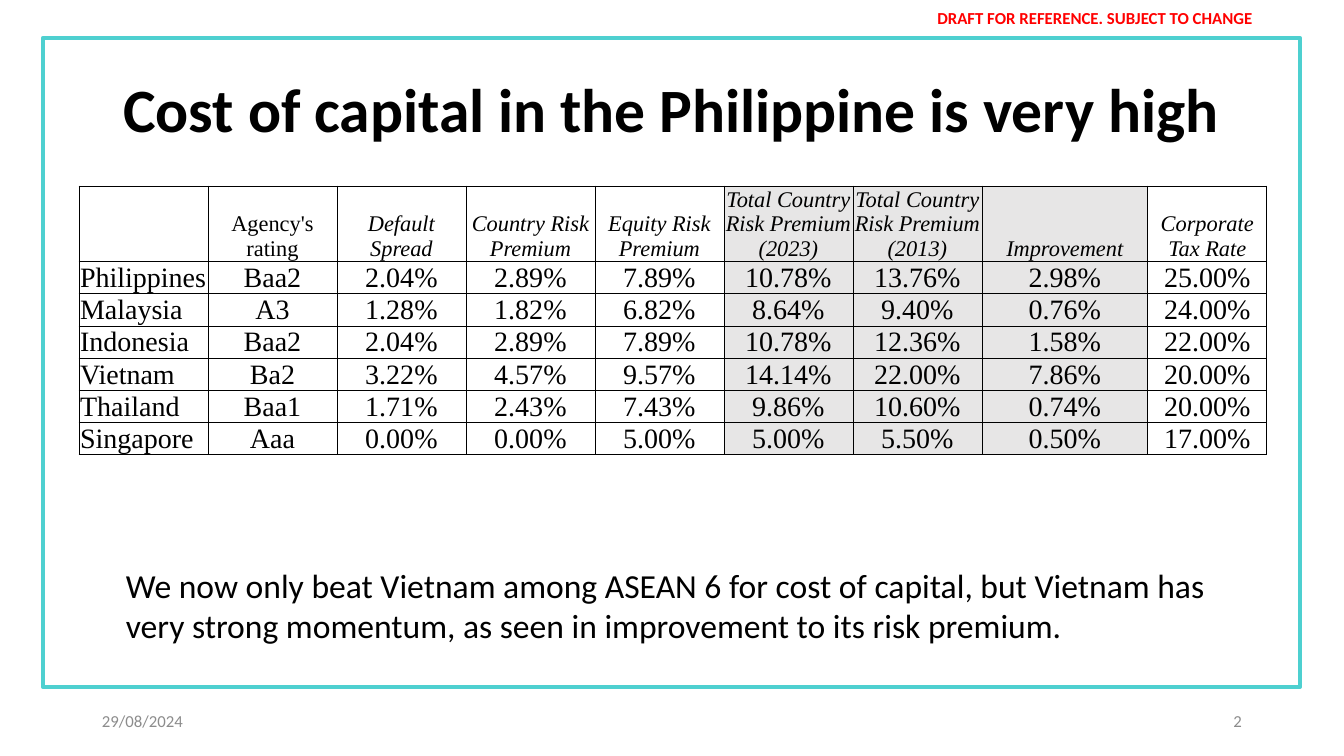
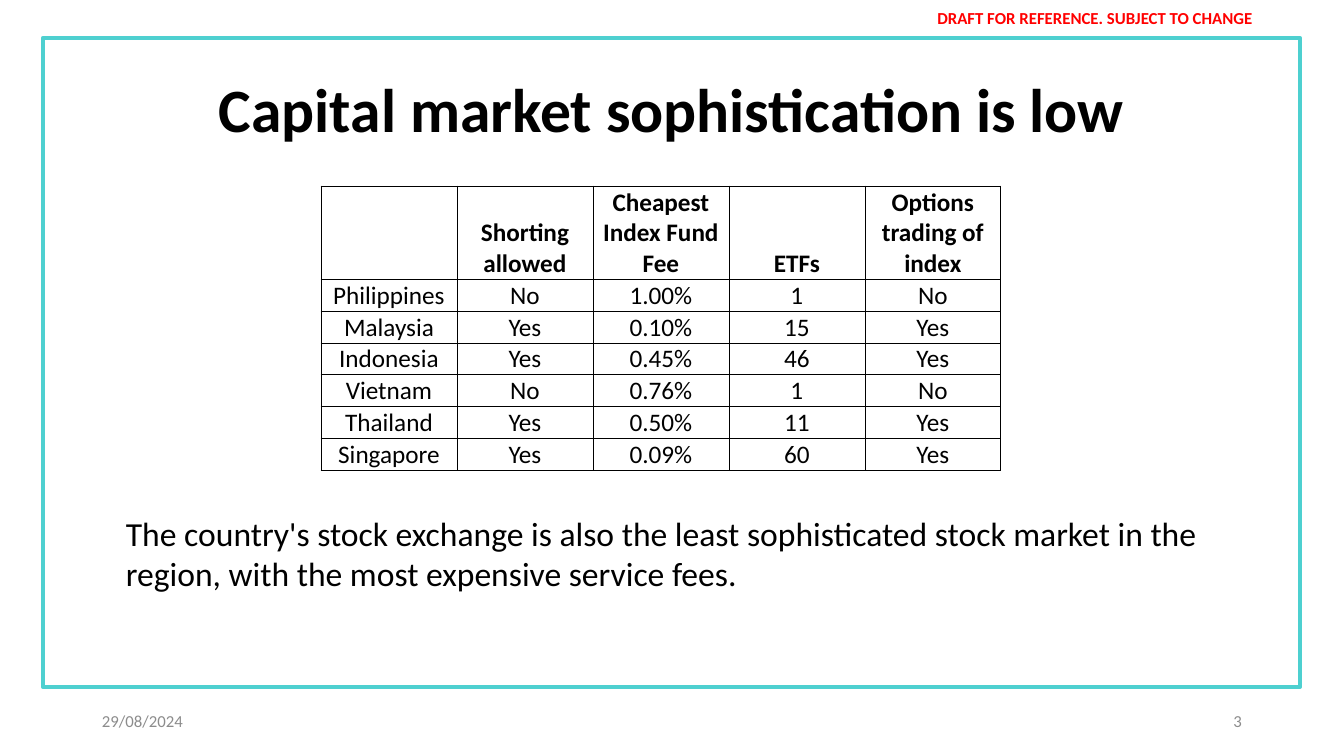
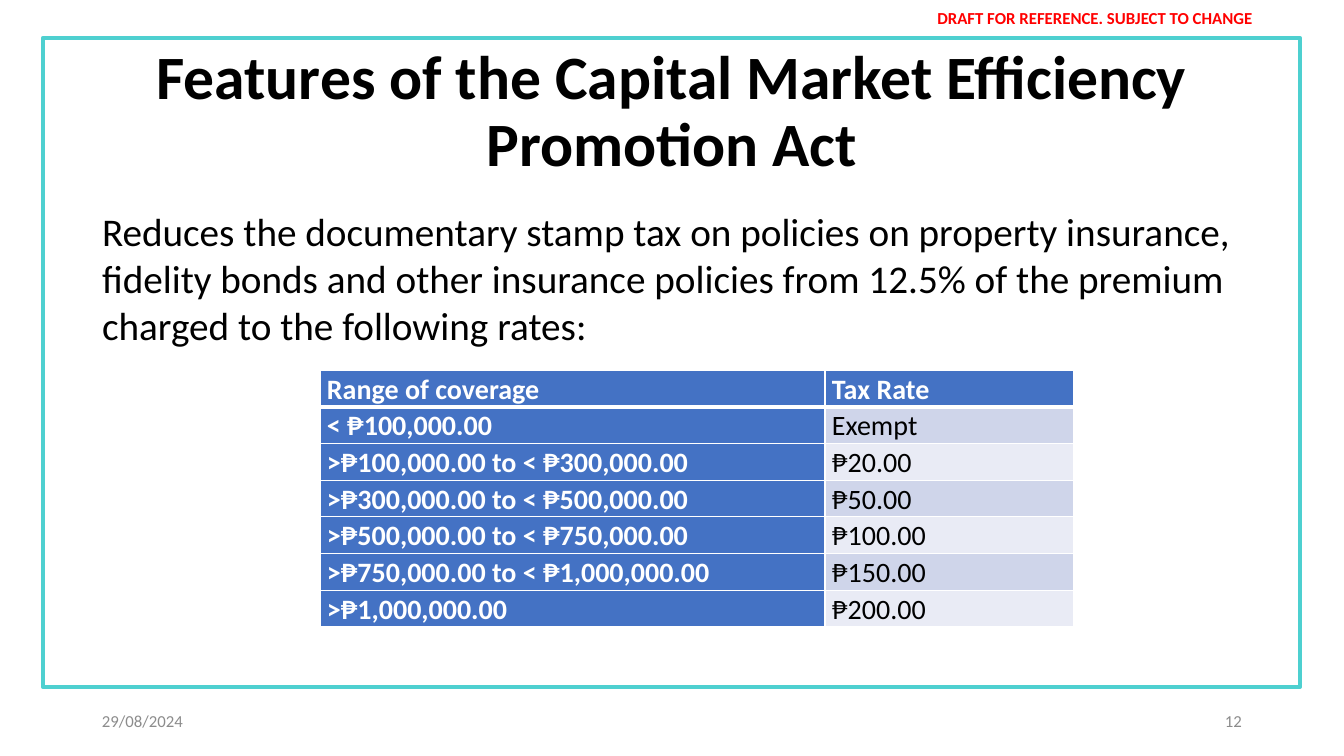
from typing import NamedTuple

from lxml.etree import SubElement
from pptx import Presentation
from pptx.dml.color import RGBColor
from pptx.enum.shapes import MSO_SHAPE as Preset
from pptx.enum.text import MSO_ANCHOR as Anchor, MSO_AUTO_SIZE as AutoSize, PP_ALIGN as Align
from pptx.oxml.ns import qn
from pptx.util import Emu, Pt

SCALE = 12192000 / 1344
COLORS = {
    "black": "000000", "white": "FFFFFF", "red": "FF0000", "gray": "8C8C8C",
    "frame": "4ED0D0", "shade": "E7E6E6", "blue": "4472C4",
    "band_dark": "CFD5EA", "band_light": "E9EBF5",
}
SERIF = "Times New Roman"
DATE = "29/08/2024"
TITLE_ONLY, TITLE_AND_BODY = 5, 1


class Box(NamedTuple):
    left: int
    top: int
    width: int
    height: int

    def inner(self, left, top, width, height):
        return Box(self.left + left, self.top + top, width, height)


PAGE = Box(0, 0, 1344, 756)
CONTENT = PAGE.inner(43, 38, 1257, 649)

CAPITAL_COSTS = [
    ["", "Agency's rating", "Default Spread", "Country Risk Premium", "Equity Risk Premium",
     "Total Country Risk Premium\n(2023)", "Total Country Risk Premium\n(2013)",
     "Improvement", "Corporate Tax Rate"],
    ["Philippines", "Baa2", "2.04%", "2.89%", "7.89%", "10.78%", "13.76%", "2.98%", "25.00%"],
    ["Malaysia", "A3", "1.28%", "1.82%", "6.82%", "8.64%", "9.40%", "0.76%", "24.00%"],
    ["Indonesia", "Baa2", "2.04%", "2.89%", "7.89%", "10.78%", "12.36%", "1.58%", "22.00%"],
    ["Vietnam", "Ba2", "3.22%", "4.57%", "9.57%", "14.14%", "22.00%", "7.86%", "20.00%"],
    ["Thailand", "Baa1", "1.71%", "2.43%", "7.43%", "9.86%", "10.60%", "0.74%", "20.00%"],
    ["Singapore", "Aaa", "0.00%", "0.00%", "5.00%", "5.00%", "5.50%", "0.50%", "17.00%"],
]
MARKET_FEATURES = [
    ["", "Shorting allowed", "Cheapest Index Fund Fee", "ETFs", "Options trading of index"],
    ["Philippines", "No", "1.00%", "1", "No"],
    ["Malaysia", "Yes", "0.10%", "15", "Yes"],
    ["Indonesia", "Yes", "0.45%", "46", "Yes"],
    ["Vietnam", "No", "0.76%", "1", "No"],
    ["Thailand", "Yes", "0.50%", "11", "Yes"],
    ["Singapore", "Yes", "0.09%", "60", "Yes"],
]
STAMP_TAX_RATES = [
    ["Range of coverage", "Tax Rate"],
    ["< ₱100,000.00", "Exempt"],
    [">₱100,000.00 to < ₱300,000.00", "₱20.00"],
    [">₱300,000.00 to < ₱500,000.00", "₱50.00"],
    [">₱500,000.00 to < ₱750,000.00", "₱100.00"],
    [">₱750,000.00 to < ₱1,000,000.00", "₱150.00"],
    [">₱1,000,000.00", "₱200.00"],
]


def px(length):
    return Emu(round(length * SCALE))


def rgb(name):
    return RGBColor.from_string(COLORS[name])


def place(shape, box):
    shape.left, shape.top, shape.width, shape.height = map(px, box)


def write(frame, text, size=12, color="black", bold=False, italic=False, font="Calibri",
          align=Align.LEFT, line_spacing=1.0, space_after=0, bullet=True):
    for index, line in enumerate(text.split("\n")):
        paragraph = frame.add_paragraph() if index else frame.paragraphs[0]
        paragraph.text = line
        if not bullet:
            properties = paragraph._p.get_or_add_pPr()
            properties.set("marL", "0")
            properties.set("indent", "0")
            SubElement(properties, qn("a:buNone"))
        paragraph.alignment = align
        paragraph.line_spacing = line_spacing
        paragraph.space_before = Pt(0)
        paragraph.space_after = Pt(space_after)
        for run in paragraph.runs:
            run.font.name = font
            run.font.size = Pt(size)
            run.font.bold = bold
            run.font.italic = italic
            run.font.color.rgb = rgb(color)


def add_label(slide, box, text, anchor=Anchor.MIDDLE, fit=AutoSize.NONE, **text_format):
    shape = slide.shapes.add_textbox(*map(px, box))
    frame = shape.text_frame
    frame.word_wrap = True
    frame.auto_size = fit
    frame.vertical_anchor = anchor
    write(frame, text, **text_format)


def add_takeaway(slide, box, text):
    add_label(slide, box, text, Anchor.TOP, AutoSize.SHAPE_TO_FIT_TEXT, size=24)


def fill_placeholder(shape, box, text, anchor, **text_format):
    place(shape, box)
    frame = shape.text_frame
    frame.auto_size = AutoSize.NONE
    frame.vertical_anchor = anchor
    write(frame, text, **text_format)


def draw_border(cell, widths, color):
    properties = cell._tc.get_or_add_tcPr()
    for side, width in zip("LRTB", widths):
        line = SubElement(properties, qn(f"a:ln{side}"), w=str(Pt(width)))
        solid = SubElement(line, qn("a:solidFill"))
        SubElement(solid, qn("a:srgbClr"), val=COLORS[color])


def add_grid(slide, box, columns, header_height, rows, cell_style, line_color="black",
             line_width=0.5, header_line=0.5, margins=(1, 1, 1, 0), anchor=Anchor.BOTTOM):
    table = slide.shapes.add_table(len(rows), len(columns), *map(px, box)).table
    table.first_row = table.horz_banding = False
    for column, width in zip(table.columns, columns):
        column.width = px(width)
    row_height = (box.height - header_height) / (len(rows) - 1)
    for row_index, values in enumerate(rows):
        table.rows[row_index].height = px(row_height if row_index else header_height)
        top = header_line if row_index == 1 else line_width
        bottom = header_line if row_index == 0 else line_width
        for column_index, value in enumerate(values):
            cell = table.cell(row_index, column_index)
            fill, text_format = cell_style(row_index, column_index)
            draw_border(cell, (line_width, line_width, top, bottom), line_color)
            cell.fill.solid()
            cell.fill.fore_color.rgb = rgb(fill)
            cell.margin_left, cell.margin_top, cell.margin_right, cell.margin_bottom = map(px, margins)
            cell.vertical_anchor = anchor
            write(cell.text_frame, value, **text_format)


def capital_cost_style(row, column):
    fill = "shade" if column in (5, 6, 7) else "white"
    align = Align.LEFT if row and not column else Align.CENTER
    return fill, dict(font=SERIF, size=20 if row else 16, italic=not row and column > 1, align=align)


def market_style(row, column):
    return "white", dict(size=18, bold=not row, align=Align.CENTER)


def stamp_tax_style(row, column):
    heading = not row or not column
    fill = "blue" if heading else "band_dark" if row % 2 else "band_light"
    return fill, dict(size=20, bold=heading, color="white" if heading else "black",
                      align=Align.JUSTIFY, line_spacing=1.07, space_after=8)


def add_page(presentation, layout, page, title, number):
    slide = presentation.slides.add_slide(presentation.slide_layouts[layout])
    border = slide.shapes.add_shape(Preset.RECTANGLE, *map(px, CONTENT))
    border.shadow.inherit = False
    border.fill.background()
    border.line.color.rgb = rgb("frame")
    border.line.width = Pt(3)
    add_label(slide, page.inner(891, 5, 408, 25), "DRAFT FOR REFERENCE. SUBJECT TO CHANGE",
              color="red", bold=True, align=Align.CENTER)
    fill_placeholder(slide.shapes.title, page.inner(92, 40, 1160, 146), title, Anchor.MIDDLE,
                     size=44, bold=True, align=Align.CENTER, line_spacing=0.9)
    add_label(slide, page.inner(92, 701, 302, 40), DATE, color="gray")
    add_label(slide, page.inner(950, 701, 302, 40), str(number), color="gray", align=Align.RIGHT)
    return slide


def build_capital_cost(presentation, box):
    slide = add_page(presentation, TITLE_ONLY, PAGE, "Cost of capital in the Philippine is very high", 2)
    add_grid(slide, box.inner(36, 148, 1188, 224), [129] * 7 + [166, 119], 62,
             CAPITAL_COSTS, capital_cost_style)
    add_takeaway(slide, box.inner(73, 522, 1113, 92),
                 "We now only beat Vietnam among ASEAN 6 for cost of capital, but Vietnam has "
                 "very strong momentum, as seen in improvement to its risk premium.")


def build_market(presentation, box):
    slide = add_page(presentation, TITLE_ONLY, PAGE, "Capital market sophistication is low", 3)
    add_grid(slide, box.inner(278, 148, 680, 176), [136] * 5, 56, MARKET_FEATURES, market_style)
    add_takeaway(slide, box.inner(73, 470, 1113, 92),
                 "The country's stock exchange is also the least sophisticated stock market in the "
                 "region, with the most expensive service fees.")


def build_stamp_tax(presentation, box):
    slide = add_page(presentation, TITLE_AND_BODY, PAGE,
                     "Features of the Capital Market Efficiency Promotion Act", 12)
    fill_placeholder(slide.placeholders[1], box.inner(49, 164, 1160, 480),
                     "Reduces the documentary stamp tax on policies on property insurance, fidelity "
                     "bonds and other insurance policies from 12.5% of the premium charged to the "
                     "following rates:", Anchor.TOP, size=28, bullet=False)
    add_grid(slide, box.inner(277, 332, 754, 217), [505, 249], 31, STAMP_TAX_RATES, stamp_tax_style,
             line_color="white", line_width=1, header_line=3, margins=(7, 0, 7, 0), anchor=Anchor.TOP)


def main():
    presentation = Presentation()
    presentation.slide_width, presentation.slide_height = px(PAGE.width), px(PAGE.height)
    for build in (build_capital_cost, build_market, build_stamp_tax):
        build(presentation, CONTENT)
    presentation.save("out.pptx")


if __name__ == "__main__":
    main()
